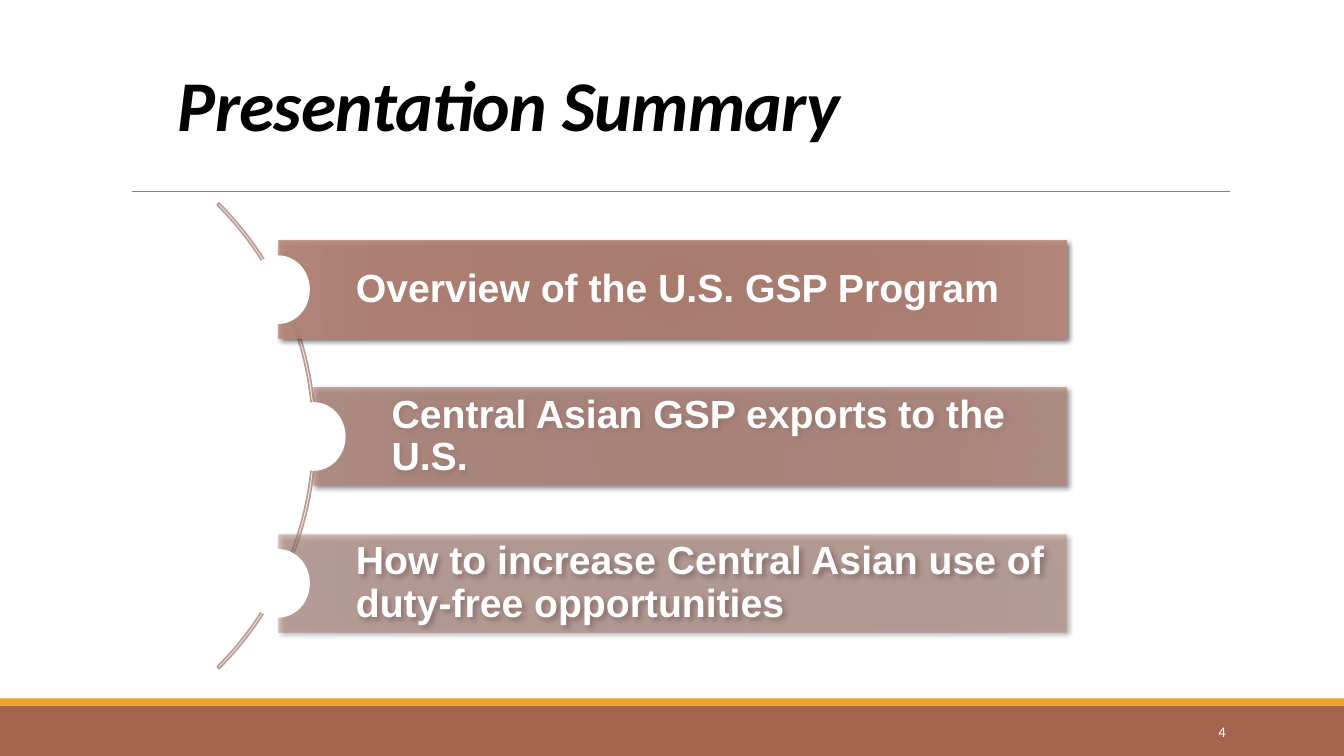
from lxml.etree import SubElement
from pptx import Presentation
from pptx.dml.color import RGBColor
from pptx.enum.shapes import MSO_CONNECTOR, MSO_SHAPE
from pptx.enum.text import MSO_ANCHOR, MSO_AUTO_SIZE, PP_ALIGN
from pptx.oxml import parse_xml
from pptx.oxml.ns import nsdecls, qn
from pptx.util import Cm, Pt

TITLE = "Presentation Summary"
PAGE = "4"
# text, left edge in cm, opacity in percent
ROWS = [
    ("Overview of the U.S. GSP Program", 7.01, 90),
    ("Central Asian GSP exports to the U.S.", 7.91, 70),
    ("How to increase Central Asian use of duty-free opportunities", 7.01, 50),
]
STOPS = [(0, "B07D70"), (34, "B17F72"), (70, "B48073"), (100, "B8897D")]

WHITE = RGBColor(0xFF, 0xFF, 0xFF)
BLACK = RGBColor(0, 0, 0)
BROWN = RGBColor(0xA5, 0x64, 0x4E)
GOLD = RGBColor(0xF0, 0xA2, 0x2E)
GREY = RGBColor(0x80, 0x80, 0x80)
ROSE = RGBColor(0xBE, 0x9C, 0x94)

WIDE, HIGH = 33.87, 19.05
BAR_TOP, BAR_STEP, BAR_HIGH, BAR_END = 6.07, 3.7, 2.46, 26.87
DOT_WIDE, DOT_HIGH = 1.6, 1.73


def add_flat(kind, left, top, width, height, color=None):
    """Add a shape without line or shadow, filled if a colour is given."""
    shape = slide.shapes.add_shape(kind, Cm(left), Cm(top), Cm(width), Cm(height))
    shape.shadow.inherit = False
    shape.line.fill.background()
    if color is None:
        shape.fill.background()
    else:
        shape.fill.solid()
        shape.fill.fore_color.rgb = color
    return shape


def shade(shape, alpha):
    """Give a bar its see-through gradient and drop shadow."""
    stops = "".join(
        f'<a:gs pos="{pos * 1000}"><a:srgbClr val="{color}">'
        f'<a:alpha val="{alpha * 1000}"/></a:srgbClr></a:gs>'
        for pos, color in STOPS)
    props = shape._element.spPr
    props.replace(props.find(qn("a:noFill")), parse_xml(
        f'<a:gradFill {nsdecls("a")} rotWithShape="1"><a:gsLst>{stops}</a:gsLst>'
        '<a:path path="circle"><a:fillToRect l="100000" t="100000" r="100000" '
        'b="100000"/></a:path></a:gradFill>'))
    props.find(qn("a:effectLst")).append(parse_xml(
        f'<a:outerShdw {nsdecls("a")} blurRad="{Pt(3.5)}" dist="{Pt(2)}" '
        'dir="2700000" algn="br" rotWithShape="0"><a:srgbClr val="000000">'
        '<a:alpha val="60000"/></a:srgbClr></a:outerShdw>'))


def set_text(shape, text, font, size, color, align, anchor):
    frame = shape.text_frame
    frame.text = text
    frame.word_wrap = True
    frame.auto_size = MSO_AUTO_SIZE.NONE
    frame.vertical_anchor = anchor
    para = frame.paragraphs[0]
    para.alignment = align
    para.font.name = font
    para.font.size = Pt(size)
    para.font.color.rgb = color
    return para


deck = Presentation()
deck.slide_width, deck.slide_height = Cm(WIDE), Cm(HIGH)
slide = deck.slides.add_slide(deck.slide_layouts[5])

# Footer bands and rule
add_flat(MSO_SHAPE.RECTANGLE, 0, 17.78, WIDE, 1.27, BROWN)
add_flat(MSO_SHAPE.RECTANGLE, 0, 17.6, WIDE, 0.18, GOLD)
rule = slide.shapes.add_connector(
    MSO_CONNECTOR.STRAIGHT, Cm(3.33), Cm(4.83), Cm(31), Cm(4.83))
rule.line.color.rgb = GREY
rule.line.width = Pt(0.5)
SubElement(rule._element.spPr, qn("a:effectLst"))

# Title and page number
title = slide.shapes.title
title.left, title.top, title.width, title.height = Cm(4.23), Cm(0.64), Cm(25.4), Cm(3.18)
para = set_text(title, TITLE, "Calibri", 51, BLACK, PP_ALIGN.LEFT, MSO_ANCHOR.BOTTOM)
para.line_spacing = 0.85
para.font.bold = para.font.italic = True
para.runs[0].font._element.set("spc", "-50")
page = slide.shapes.add_textbox(Cm(27.51), Cm(17.93), Cm(3.63), Cm(1.02))
set_text(page, PAGE, "Calibri", 10.5, WHITE, PP_ALIGN.RIGHT, MSO_ANCHOR.MIDDLE)

# Arc with one bar and one dot per topic
arc = add_flat(MSO_SHAPE.BLOCK_ARC, -8.64, 2.69, 16.59, 16.59)
for i, value in enumerate((189, 27, 0.004)):
    arc.adjustments[i] = value
arc.line.color.rgb = ROSE
arc.line.width = Pt(1.25)

for i, (text, left, alpha) in enumerate(ROWS):
    top = BAR_TOP + i * BAR_STEP
    bar = add_flat(MSO_SHAPE.RECTANGLE, left, top, BAR_END - left, BAR_HIGH)
    shade(bar, alpha)
    para = set_text(bar, text, "Arial", 28, WHITE, PP_ALIGN.LEFT, MSO_ANCHOR.MIDDLE)
    para.line_spacing = 0.9
    para.font.bold = True
    frame = bar.text_frame
    frame.margin_left = Cm(1.96)
    frame.margin_top = frame.margin_right = frame.margin_bottom = Cm(0.2)
    add_flat(MSO_SHAPE.OVAL, left - DOT_WIDE / 2, top + (BAR_HIGH - DOT_HIGH) / 2,
             DOT_WIDE, DOT_HIGH, WHITE)

deck.save("out.pptx")
